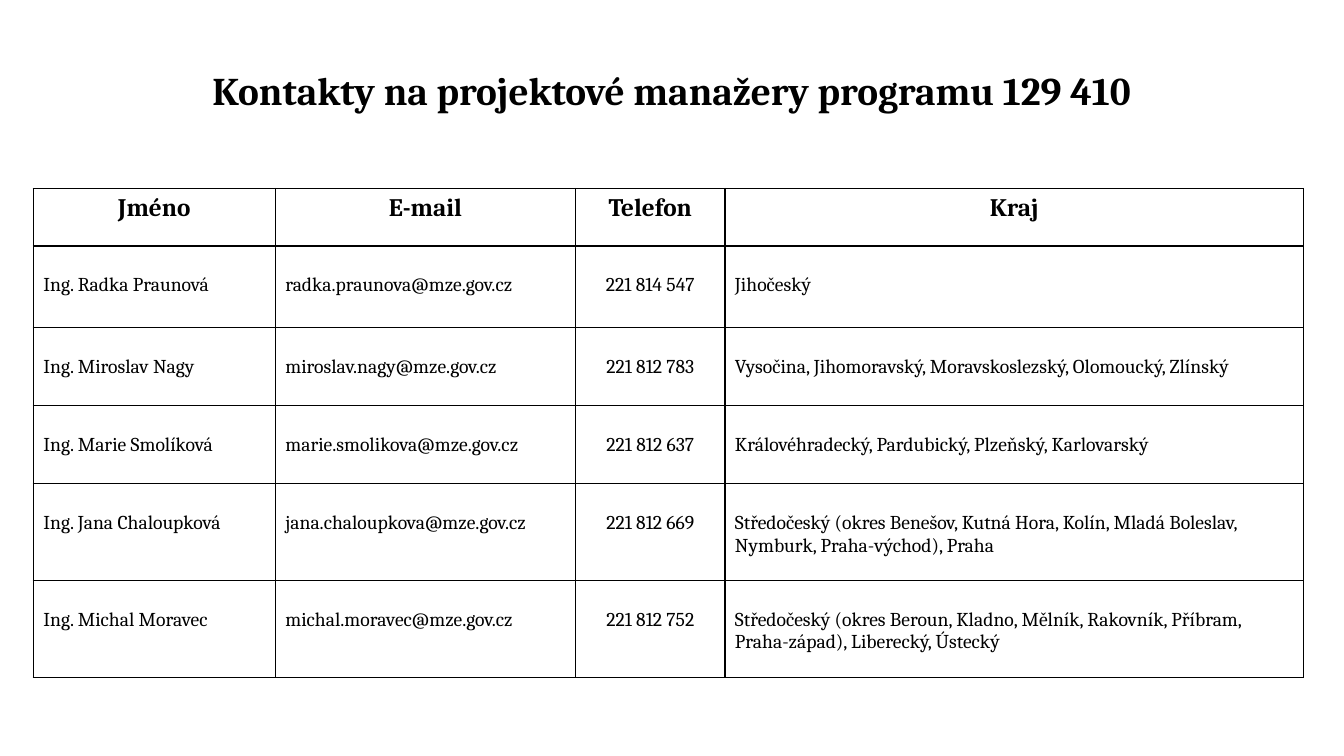
from lxml.etree import SubElement
from pptx import Presentation
from pptx.dml.color import RGBColor
from pptx.enum.text import MSO_ANCHOR, PP_ALIGN
from pptx.oxml.ns import qn
from pptx.util import Inches, Pt

HEADS = ["Jméno", "E-mail", "Telefon", "Kraj"]
STAFF = [
    ["Ing. Radka Praunová", "radka.praunova@mze.gov.cz", "221 814 547", "Jihočeský"],
    ["Ing. Miroslav Nagy", "miroslav.nagy@mze.gov.cz", "221 812 783",
     "Vysočina, Jihomoravský, Moravskoslezský, Olomoucký, Zlínský"],
    ["Ing. Marie Smolíková", "marie.smolikova@mze.gov.cz", "221 812 637",
     "Královéhradecký, Pardubický, Plzeňský, Karlovarský"],
    ["Ing. Jana Chaloupková", "jana.chaloupkova@mze.gov.cz", "221 812 669",
     "Středočeský (okres Benešov, Kutná Hora, Kolín, Mladá Boleslav, Nymburk, Praha-východ), Praha"],
    ["Ing. Michal Moravec", "michal.moravec@mze.gov.cz", "221 812 752",
     "Středočeský (okres Beroun, Kladno, Mělník, Rakovník, Příbram, Praha-západ), Liberecký, Ústecký"],
]
WIDTHS = [2.4, 2.98, 1.48, 5.74]
HEIGHTS = [0.57, 0.81, 0.77, 0.78, 0.96, 0.96]


def color(code):
    return RGBColor.from_string(code)


class Deck:
    """Holds the style and the current slide."""

    font = "Cambria"
    ink = "000000"

    def __init__(self, slide):
        self.slide = slide

    def label(self, frame, text, size, bold, center):
        frame.text = text
        para = frame.paragraphs[0]
        para.alignment = PP_ALIGN.CENTER if center else PP_ALIGN.LEFT
        for run in para.runs:
            run.font.name = self.font
            run.font.size = Pt(size)
            run.font.bold = bold
            run.font.color.rgb = color(self.ink)

    def title(self, text, left, top, width, height):
        box = self.slide.shapes.add_textbox(
            Inches(left), Inches(top), Inches(width), Inches(height))
        frame = box.text_frame
        frame.word_wrap = True
        frame.vertical_anchor = MSO_ANCHOR.MIDDLE
        self.label(frame, text, 28, True, True)
        frame.paragraphs[0].line_spacing = 0.9

    def border(self, cell):
        props = cell._tc.get_or_add_tcPr()
        for spot, side in enumerate(["lnL", "lnR", "lnT", "lnB"]):
            line = SubElement(props, qn("a:" + side), w=str(Pt(1)))
            fill = SubElement(line, qn("a:solidFill"))
            SubElement(fill, qn("a:srgbClr"), val=self.ink)
            props.insert(spot, line)

    def table(self, rows, left, top, widths, heights):
        table = self.slide.shapes.add_table(
            len(rows), len(widths), Inches(left), Inches(top),
            Inches(sum(widths)), Inches(sum(heights))).table
        table.first_row = table.horz_banding = False
        for col, width in zip(table.columns, widths):
            col.width = Inches(width)
        for r, (texts, height) in enumerate(zip(rows, heights)):
            table.rows[r].height = Inches(height)
            head = r == 0
            for c, text in enumerate(texts):
                cell = table.cell(r, c)
                cell.fill.background()
                cell.margin_top = Inches(0.05 if head else 0.28)
                self.label(cell.text_frame, text, 18 if head else 14,
                           head, head or c == 2)
                self.border(cell)


def main():
    show = Presentation()
    show.slide_width, show.slide_height = Inches(13.33), Inches(7.5)
    deck = Deck(show.slides.add_slide(show.slide_layouts[6]))
    deck.title("Kontakty na projektové manažery programu 129 410",
               1.87, 0.55, 9.58, 0.75)
    deck.table([HEADS] + STAFF, 0.33, 1.87, WIDTHS, HEIGHTS)
    show.save("out.pptx")


if __name__ == "__main__":
    main()
